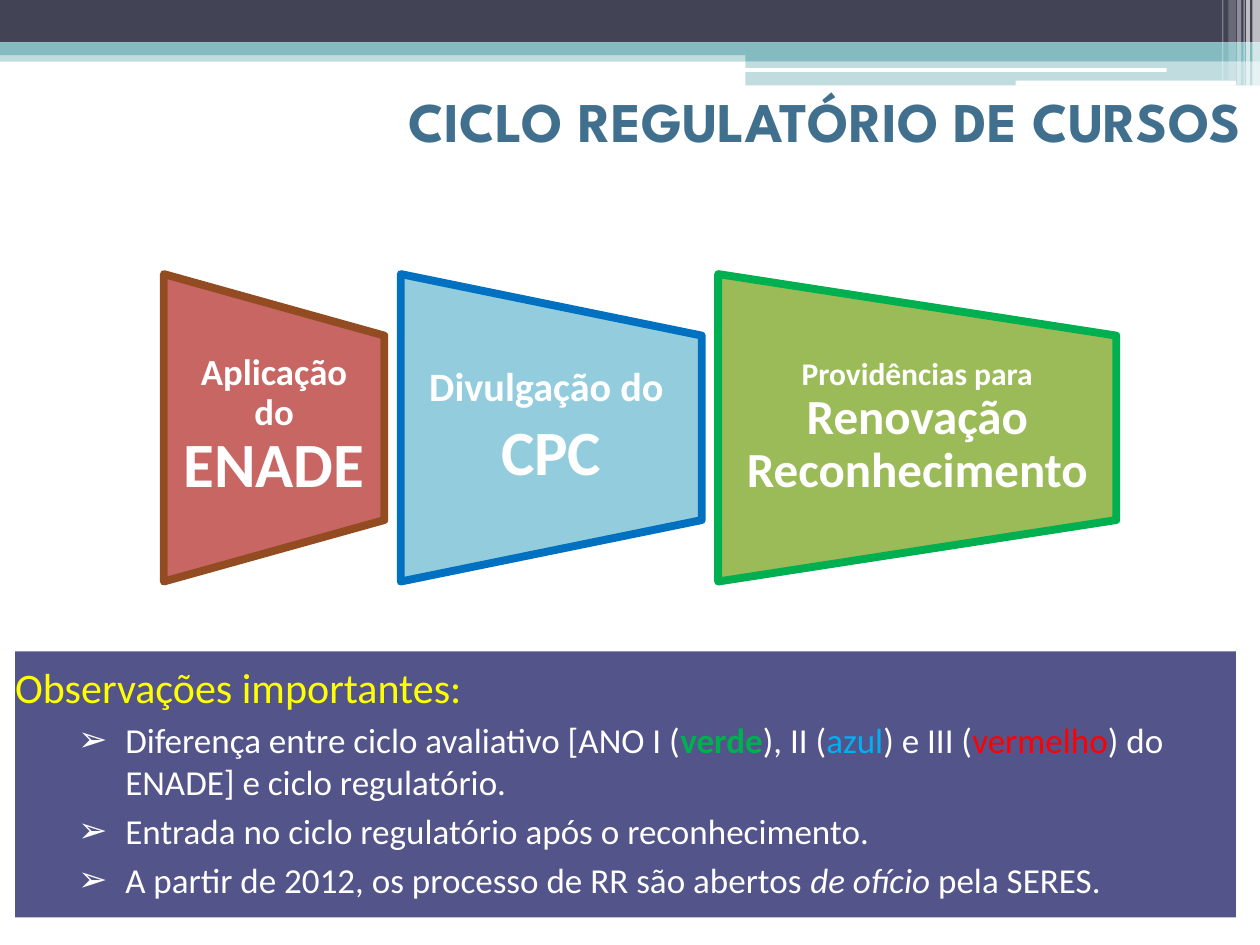
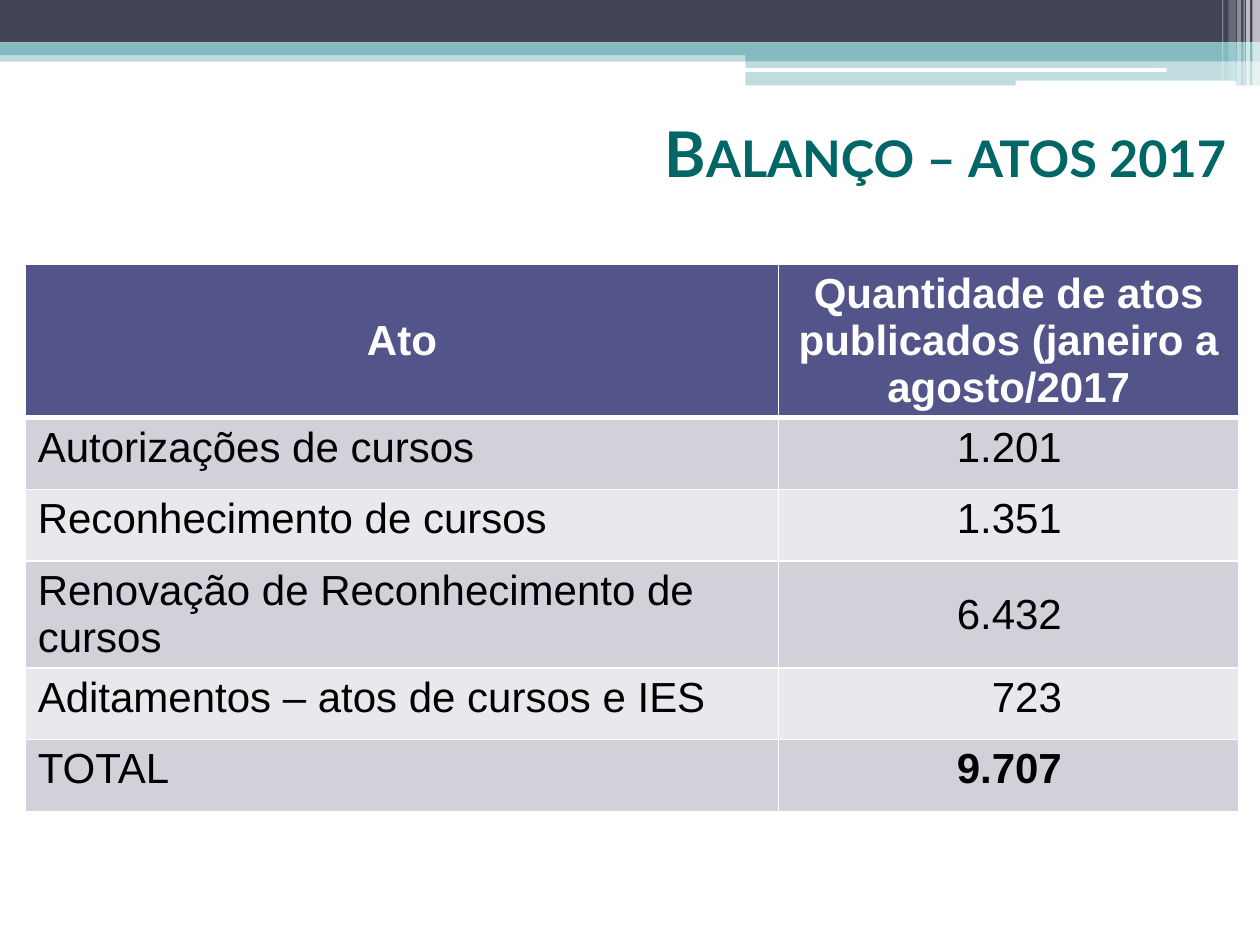
from dataclasses import dataclass

import lxml.etree
import pptx
import pptx.dml.color
import pptx.enum.shapes
import pptx.enum.text
import pptx.oxml.ns
import pptx.util

Pt = pptx.util.Pt
qn = pptx.oxml.ns.qn
SHAPE = pptx.enum.shapes.MSO_SHAPE
ALIGN = pptx.enum.text.PP_ALIGN
ANCHOR = pptx.enum.text.MSO_ANCHOR


@dataclass(frozen=True)
class Theme:
    # Colours
    white: str = "FFFFFF"
    black: str = "000000"
    dark: str = "424456"
    teal: str = "83BBC1"
    indigo: str = "53548A"
    title_blue: str = "41708E"
    title_green: str = "006666"
    yellow: str = "FFFF00"
    green: str = "00B050"
    azure: str = "00B0F0"
    red: str = "FF0000"
    stripes: tuple = ("D1D1DA", "E9E9ED")
    # Fonts and type sizes
    text_font: str = "Calibri"
    table_font: str = "Arial"
    heading: int = 24
    bullet: int = 20
    cell: int = 24


T = Theme()


# ---- Shared helpers ----
def rgb(code):
    return pptx.dml.color.RGBColor.from_string(code)


def add_run(p, text, size, color, font=T.text_font, bold=False, italic=False):
    r = p.add_run()
    r.text = text
    f = r.font
    f.name, f.size, f.bold, f.italic = font, Pt(size), bold, italic
    f.color.rgb = rgb(color)
    return r


def add_filled(shapes, kind, box, color, alpha=100):
    sp = shapes.add_shape(kind, *map(Pt, box))
    sp.shadow.inherit = False
    sp.line.fill.background()
    sp.fill.solid()
    sp.fill.fore_color.rgb = rgb(color)
    if alpha < 100:
        clr = sp._element.spPr.find(".//" + qn("a:srgbClr"))
        lxml.etree.SubElement(clr, qn("a:alpha"), val=str(alpha * 1000))
    return sp


def place(sp, box):
    sp.left, sp.top, sp.width, sp.height = map(Pt, box)


def set_insets(tf, left, top, right, bottom):
    tf.margin_left, tf.margin_top = Pt(left), Pt(top)
    tf.margin_right, tf.margin_bottom = Pt(right), Pt(bottom)


def set_title(s, box, text, size, font, color, spacing=1.0, small_caps=False):
    sp = s.shapes.title
    place(sp, box)
    tf = sp.text_frame
    tf.auto_size = pptx.enum.text.MSO_AUTO_SIZE.NONE
    tf.vertical_anchor = ANCHOR.MIDDLE
    p = tf.paragraphs[0]
    p.alignment = ALIGN.RIGHT
    p.line_spacing = spacing
    r = add_run(p, text, size, color, font, bold=True)
    if small_caps:
        r._r.get_or_add_rPr().set("cap", "small")


# ---- Header bands, held by the slide master ----
def add_master_bands(prs, s):
    bars = [
        ((0, 28.8, 720, 6.5), T.teal, 50),
        ((0, 0, 720, 24.3), T.dark, 100),
        ((0, 24.3, 720, 7.2), T.teal, 100),
        ((426, 28.1, 294, 6.9), T.teal, 100),
        ((426, 34.8, 294, 14), T.teal, 50),
    ]
    pills = [(425.5, 38.9, 241.2, 2.2), (580.3, 46.1, 126, 2.9)]
    # left, width, height, opacity
    stripes = [
        (715.7, 4.3, 49, 65), (712.1, 2.2, 49, 65), (710.6, 0.7, 49, 60),
        (707, 2.2, 49, 40), (702, 4.3, 46, 20), (698.4, 0.7, 46, 30),
    ]
    parts = [add_filled(s.shapes, SHAPE.RECTANGLE, *bar) for bar in bars]
    parts += [add_filled(s.shapes, SHAPE.ROUNDED_RECTANGLE, box, T.white) for box in pills]
    parts += [add_filled(s.shapes, SHAPE.RECTANGLE, (x, 0, w, h), T.white, alpha)
              for x, w, h, alpha in stripes]
    tree = prs.slide_master.shapes.element
    for i, sp in enumerate(parts):
        tree.insert(2 + i, sp._element)


# ---- Cycle of three funnels ----
def add_funnel(s, box, fill, line, inset, paragraphs, space_after):
    x, y, w, h = box
    # Turned a quarter, so width and height swap around the same centre
    sp = add_filled(s.shapes, SHAPE.FLOWCHART_MANUAL_OPERATION,
                    (x + (w - h) / 2, y + (h - w) / 2, h, w), fill)
    sp.rotation = 270
    sp.line.color.rgb = rgb(line)
    sp.line.width = Pt(4.5)
    lxml.etree.SubElement(sp.line._get_or_add_ln(), qn("a:round"))

    tf = s.shapes.add_textbox(*map(Pt, (x, y + h * 0.2, w, h * 0.6))).text_frame
    tf.word_wrap = True
    tf.vertical_anchor = ANCHOR.MIDDLE
    set_insets(tf, inset, 0, inset, 0)
    for i, runs in enumerate(paragraphs):
        p = tf.paragraphs[0] if i == 0 else tf.add_paragraph()
        p.alignment = ALIGN.CENTER
        p.line_spacing = 0.9
        p.space_after = Pt(space_after)
        for text, size in runs:
            add_run(p, text, size, T.white, bold=True)


def add_cycle(s, box, gap=9.4):
    x, y, _, h = box
    # width, fill, line, inset, paragraphs, space after
    stages = [
        (126, "C86664", "934C22", 10.8,
         [[("Aplicação do ", 21), ("ENADE", 36)]], 0),
        (172, "93CDDD", "0070C0", 11.5,
         [[("Divulgação do ", 23)], [("CPC", 36)]], 6),
        (227.5, "9BBB59", T.green, 8.6,
         [[("Providências para ", 18), ("Renovação Reconhecimento", 28)]], 0),
    ]
    for w, *style in stages:
        add_funnel(s, (x, y, w, h), *style)
        x += w + gap


# ---- Notes panel ----
def set_bullet(p, char=None, left=0, hanging=0):
    pPr = p._p.get_or_add_pPr()
    pPr.set("marL", str(Pt(left)))
    pPr.set("indent", str(-Pt(hanging)))
    if char:
        lxml.etree.SubElement(pPr, qn("a:buFont"), typeface="Arial")
        lxml.etree.SubElement(pPr, qn("a:buChar"), char=char)
    else:
        lxml.etree.SubElement(pPr, qn("a:buNone"))


def fill_observations(s, box):
    sp = s.placeholders[1]
    place(sp, box)
    sp.fill.solid()
    sp.fill.fore_color.rgb = rgb(T.indigo)
    tf = sp.text_frame
    tf.auto_size = pptx.enum.text.MSO_AUTO_SIZE.NONE
    set_insets(tf, 0, 5.8, 0, 5.8)
    p = tf.paragraphs[0]
    set_bullet(p)
    add_run(p, "Observações importantes:", T.heading, T.yellow)

    # text, colour, bold, italic
    items = [
        [("Diferença entre ciclo avaliativo [ANO I (",), ("verde", T.green, True),
         ("), II (",), ("azul", T.azure), (") e III (",), ("vermelho", T.red),
         (") do ENADE] e ciclo regulatório.",)],
        [("Entrada no ciclo regulatório após o reconhecimento.",)],
        [("A partir de 2012, os processo de RR são abertos ",),
         ("de ofício ", T.white, False, True), ("pela SERES.",)],
    ]
    for runs in items:
        p = tf.add_paragraph()
        p.level = 1
        set_bullet(p, "➢", 63, 27)
        for text, color, bold, italic in (
                run + (T.white, False, False)[len(run) - 1:] for run in runs):
            add_run(p, text, T.bullet, color, bold=bold, italic=italic)


# ---- Table of acts ----
def style_cell(cell, text, fill, color, bold, align, anchor, bottom=1):
    tcPr = cell._tc.get_or_add_tcPr()
    for side, width in (("L", 1), ("R", 1), ("T", 1), ("B", bottom)):
        ln = lxml.etree.SubElement(tcPr, qn("a:ln" + side), w=str(Pt(width)))
        solid = lxml.etree.SubElement(ln, qn("a:solidFill"))
        lxml.etree.SubElement(solid, qn("a:srgbClr"), val=T.white)
    cell.fill.solid()
    cell.fill.fore_color.rgb = rgb(fill)
    cell.vertical_anchor = anchor
    p = cell.text_frame.paragraphs[0]
    p.alignment = align
    add_run(p, text, T.cell, color, T.table_font, bold)


def add_acts_table(s, box):
    header = ("Ato", "Quantidade de atos publicados (janeiro a agosto/2017")
    rows = [
        ("Autorizações de cursos", "1.201"),
        ("Reconhecimento de cursos", "1.351"),
        ("Renovação de Reconhecimento de cursos", "6.432"),
        ("Aditamentos – atos de cursos e IES", "723"),
        ("TOTAL", "9.707"),
    ]
    table = s.shapes.add_table(len(rows) + 1, 2, *map(Pt, box)).table
    for column, width in zip(table.columns, (430.6, 262.8)):
        column.width = Pt(width)
    for row, height in zip(table.rows, (87, 41, 41, 61, 41, 41)):
        row.height = Pt(height)
    for c, text in enumerate(header):
        style_cell(table.cell(0, c), text, T.indigo, T.white, True,
                   ALIGN.CENTER, ANCHOR.MIDDLE, bottom=3)
    for i, (act, count) in enumerate(rows, start=1):
        fill = T.stripes[(i - 1) % 2]
        style_cell(table.cell(i, 0), act, fill, T.black, False, ALIGN.LEFT, ANCHOR.TOP)
        # Figures share a right edge in the middle of their column
        cell = table.cell(i, 1)
        cell.margin_right = Pt(101)
        anchor = ANCHOR.MIDDLE if act.startswith("Renovação") else ANCHOR.TOP
        style_cell(cell, count, fill, T.black, act == "TOTAL", ALIGN.RIGHT, anchor)


# ---- Slides ----
def build_cycle_slide(s):
    set_title(s, (69, 37.5, 648, 62.6), "CICLO REGULATÓRIO DE CURSOS",
              32, "League Spartan", T.title_blue)
    add_cycle(s, (93.6, 156.6, 544.3, 175.7))
    fill_observations(s, (8.6, 372.2, 697.7, 152))


def build_balance_slide(s):
    set_title(s, (59.8, 49, 648, 84.2), "Balanço – atos 2017",
              36, "Lato", T.title_green, spacing=0.8, small_caps=True)
    add_acts_table(s, (14.4, 151.2, 693.4, 312))


def main():
    prs = pptx.Presentation()
    prs.slide_width, prs.slide_height = Pt(720), Pt(540)
    cycle = prs.slides.add_slide(prs.slide_layouts[1])
    add_master_bands(prs, cycle)
    build_cycle_slide(cycle)
    build_balance_slide(prs.slides.add_slide(prs.slide_layouts[5]))
    prs.save("out.pptx")


if __name__ == "__main__":
    main()
